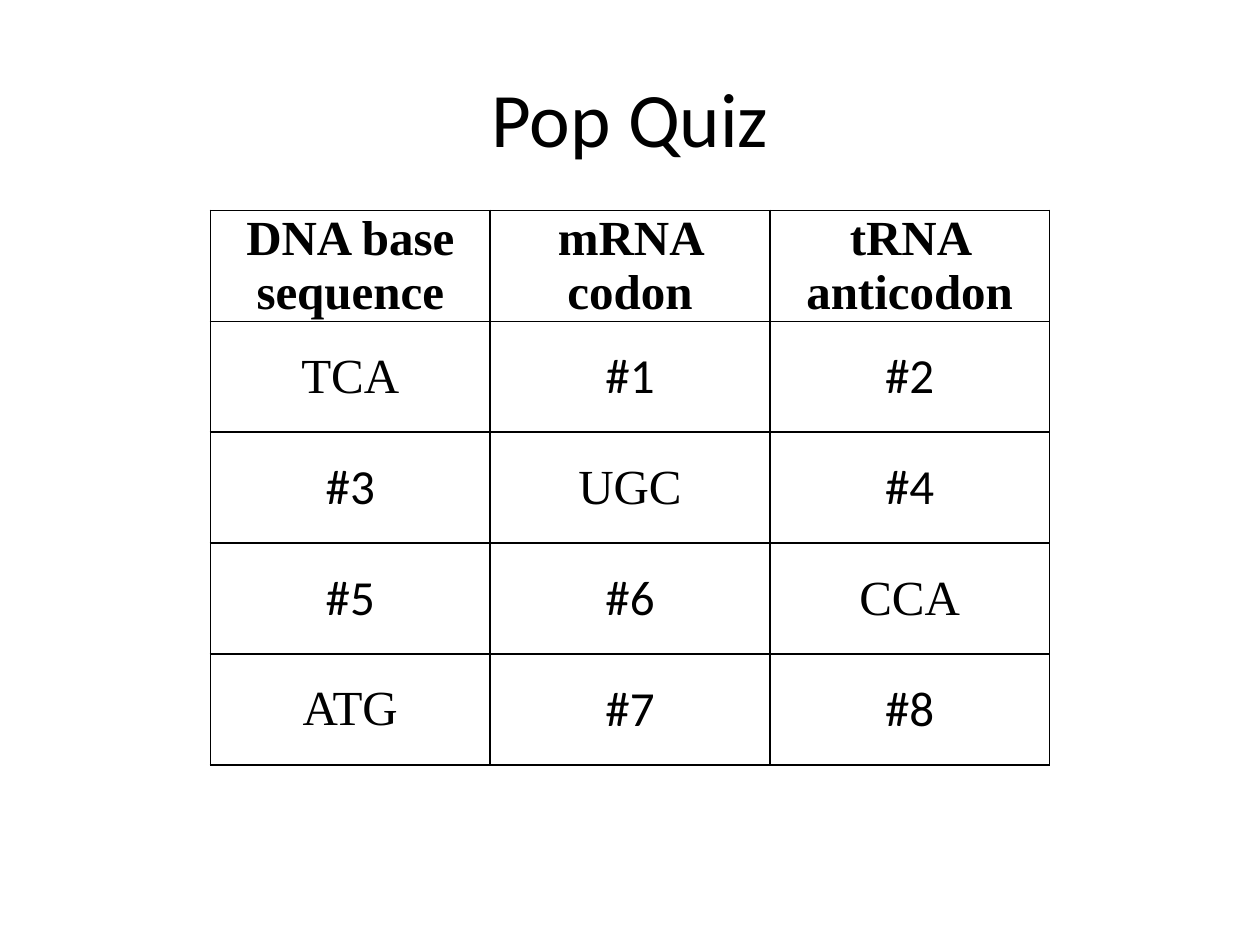
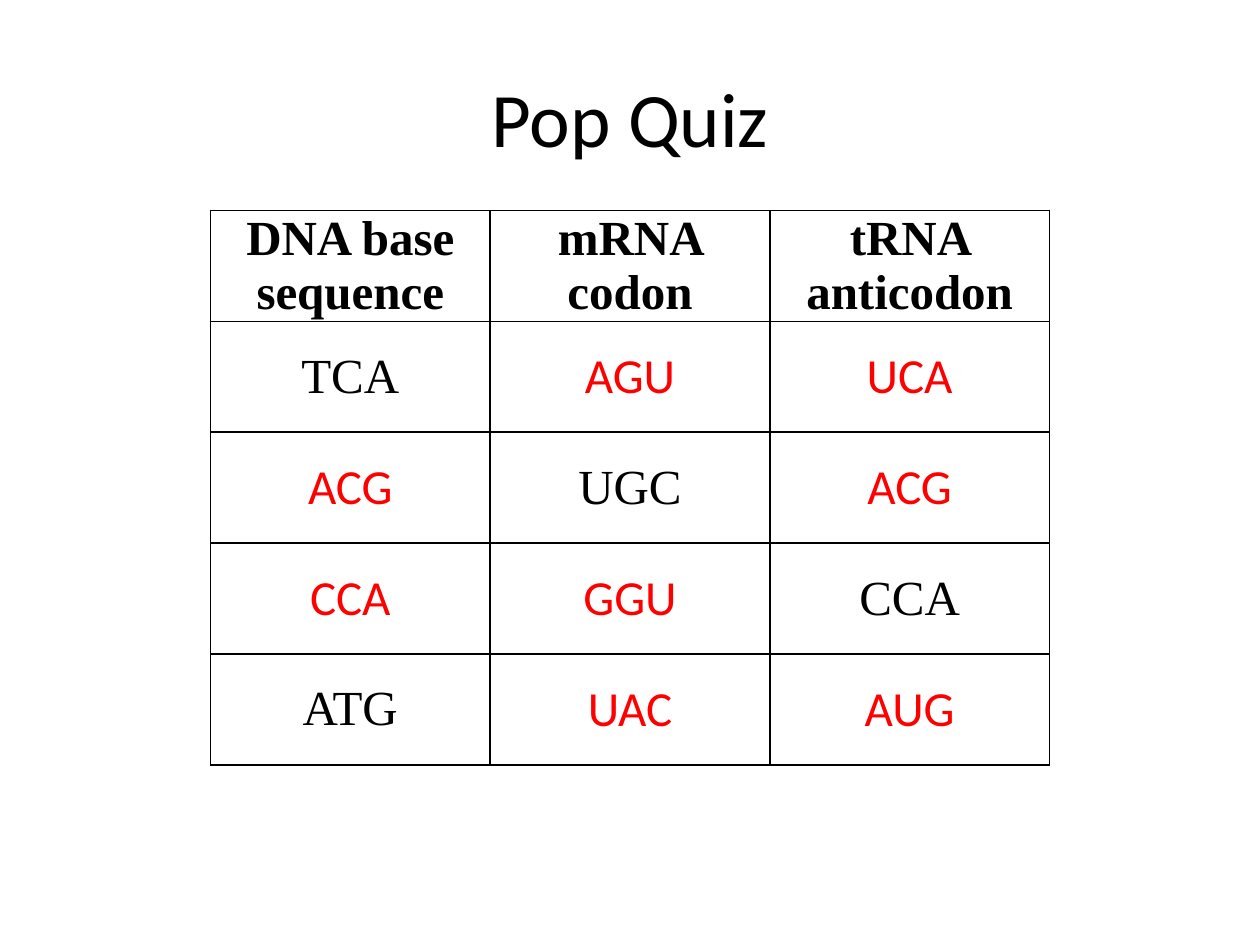
from dataclasses import dataclass

from lxml import etree
from pptx import Presentation
from pptx.dml.color import RGBColor
from pptx.enum.text import MSO_ANCHOR, PP_ALIGN
from pptx.oxml.ns import qn
from pptx.util import Inches, Pt

MIDDLE = MSO_ANCHOR.MIDDLE
CENTER = PP_ALIGN.CENTER
BLACK, RED = "000000", "FF0000"
SANS, SERIF = "Calibri", "Times New Roman"
TITLE_ONLY = 5

HEADS = ("DNA base sequence", "mRNA codon", "tRNA anticodon")
GIVEN = ("TCA", "UGC", "CCA", "ATG")
COL_WIDTH, ROW_HEIGHT = Inches(2.22), Inches(0.88)
TITLE_BOX = {"left": Inches(0.5), "top": Inches(0.3),
             "width": Inches(9), "height": Inches(1.25)}
CELL = {"vertical_anchor": MIDDLE,
        "margin_left": Inches(0.07), "margin_right": Inches(0.07),
        "margin_top": 0, "margin_bottom": 0}


@dataclass
class Style:
    face: str
    size: int = 28
    color: str = BLACK
    bold: bool = False


@dataclass
class Quiz:
    blanks: tuple[str, ...]
    color: str


TITLE = Style(SANS, 44)
HEAD = Style(SERIF, bold=True)
CLUE = Style(SERIF)

QUIZZES = (
    Quiz(tuple(f"#{n}" for n in range(1, 9)), BLACK),
    Quiz(("AGU", "UCA", "ACG", "ACG", "CCA", "GGU", "UAC", "AUG"), RED),
)


def rgb(code: str) -> RGBColor:
    return RGBColor.from_string(code)


def set_all(target, values: dict) -> None:
    for name, value in values.items():
        setattr(target, name, value)


def write(frame, text: str, style: Style) -> None:
    frame.text = text
    para = frame.paragraphs[0]
    para.alignment = CENTER
    font = para.runs[0].font
    set_all(font, {"name": style.face, "size": Pt(style.size), "bold": style.bold})
    font.color.rgb = rgb(style.color)


def add_borders(cell) -> None:
    props = cell._tc.get_or_add_tcPr()
    for side in ("lnL", "lnR", "lnT", "lnB"):
        line = etree.SubElement(props, qn(f"a:{side}"), w=str(Pt(1)))
        fill = etree.SubElement(line, qn("a:solidFill"))
        etree.SubElement(fill, qn("a:srgbClr"), val=BLACK)


def fill_cell(cell, text: str, style: Style) -> None:
    set_all(cell, CELL)
    add_borders(cell)
    cell.fill.background()
    write(cell.text_frame, text, style)


def lay_out(quiz: Quiz) -> list[list[tuple[str, Style]]]:
    """Put the clues on the diagonal and the blanks in the other cells."""
    blanks = iter(quiz.blanks)
    blank = Style(SANS, color=quiz.color)
    rows = [[(head, HEAD) for head in HEADS]]
    for idx, clue in enumerate(GIVEN):
        rows.append([(clue, CLUE) if col == idx % len(HEADS) else (next(blanks), blank)
                     for col in range(len(HEADS))])
    return rows


def add_quiz(deck, quiz: Quiz) -> None:
    slide = deck.slides.add_slide(deck.slide_layouts[TITLE_ONLY])
    title = slide.shapes.title
    set_all(title, TITLE_BOX)
    title.text_frame.vertical_anchor = MIDDLE
    write(title.text_frame, "Pop Quiz", TITLE)

    rows = lay_out(quiz)
    table = slide.shapes.add_table(
        len(rows), len(HEADS), Inches(1.67), Inches(1.67),
        COL_WIDTH * len(HEADS), ROW_HEIGHT * len(rows)).table
    set_all(table, {"first_row": False, "horz_banding": False})
    for col in table.columns:
        col.width = COL_WIDTH
    for y, row in enumerate(rows):
        table.rows[y].height = ROW_HEIGHT
        for x, (text, style) in enumerate(row):
            fill_cell(table.cell(y, x), text, style)


def main() -> None:
    deck = Presentation()
    set_all(deck, {"slide_width": Inches(10), "slide_height": Inches(7.5)})
    for quiz in QUIZZES:
        add_quiz(deck, quiz)
    deck.save("out.pptx")


if __name__ == "__main__":
    main()
